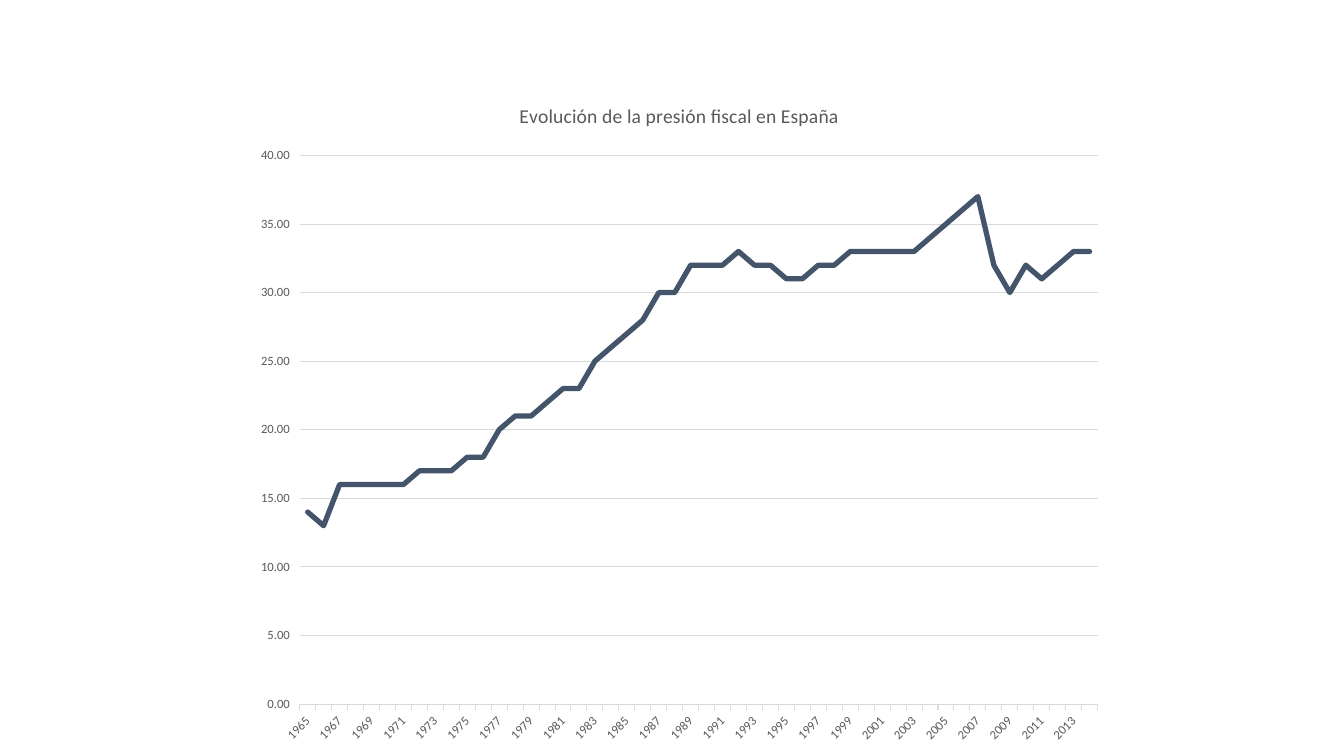
from pptx import Presentation
from pptx.chart.data import CategoryChartData
from pptx.dml.color import RGBColor
from pptx.enum.chart import XL_CHART_TYPE, XL_TICK_MARK
from pptx.util import Emu, Pt

EMU_PER_PX = 9525
FIRST_YEAR = 1965
TAX_PRESSURE = [
    14, 13, 16, 16, 16, 16, 16, 17, 17, 17,
    18, 18, 20, 21, 21, 22, 23, 23, 25, 26,
    27, 28, 30, 30, 32, 32, 32, 33, 32, 32,
    31, 31, 32, 32, 33, 33, 33, 33, 33, 34,
    35, 36, 37, 32, 30, 32, 31, 32, 33, 33,
]


def px(length):
    return Emu(length * EMU_PER_PX)


def color(value):
    return RGBColor.from_string(value)


class SlideBuilder:
    """Holds the chart style and the current slide."""

    font_name = "Calibri"
    text_color = "595959"
    rule_color = "D9D9D9"
    series_color = "44546A"

    def __init__(self, slide):
        self.slide = slide

    def style_font(self, font, size):
        font.name = self.font_name
        font.size = Pt(size)
        font.bold = False
        font.color.rgb = color(self.text_color)

    def style_line(self, line, value, width):
        line.color.rgb = color(value)
        line.width = Pt(width)

    def chart_title(self, chart, text):
        chart.has_title = True
        chart.chart_title.include_in_layout = False
        paragraph = chart.chart_title.text_frame.paragraphs[0]
        paragraph.text = text
        self.style_font(paragraph.runs[0].font, 14)

    def category_axis(self, axis):
        self.style_font(axis.tick_labels.font, 9)
        axis.major_tick_mark = XL_TICK_MARK.OUTSIDE
        axis.minor_tick_mark = XL_TICK_MARK.NONE
        self.style_line(axis.format.line, self.rule_color, 0.75)
        body = axis._element.txPr.bodyPr
        body.set("rot", "-2700000")
        body.set("vert", "horz")

    def value_axis(self, axis, maximum, step):
        self.style_font(axis.tick_labels.font, 9)
        axis.tick_labels.number_format = "0.00"
        axis.tick_labels.number_format_is_linked = False
        axis.minimum_scale = 0
        axis.maximum_scale = maximum
        axis.major_unit = step
        axis.major_tick_mark = XL_TICK_MARK.OUTSIDE
        axis.minor_tick_mark = XL_TICK_MARK.NONE
        axis.format.line.fill.background()
        axis.has_major_gridlines = True
        self.style_line(axis.major_gridlines.format.line, self.rule_color, 0.75)

    def line_chart(self, left, top, width, height, title, categories, values):
        data = CategoryChartData(number_format="0.00")
        data.categories = categories
        data.add_series("Presión fiscal", values)
        frame = self.slide.shapes.add_chart(
            XL_CHART_TYPE.LINE, px(left), px(top), px(width), px(height), data
        )
        chart = frame.chart
        chart.font.name = self.font_name
        chart.font.size = Pt(10)
        chart.has_legend = False
        self.chart_title(chart, title)
        self.category_axis(chart.category_axis)
        self.value_axis(chart.value_axis, 40, 5)
        plot = chart.plots[0]
        plot.vary_by_categories = False
        series = plot.series[0]
        series.smooth = False
        self.style_line(series.format.line, self.series_color, 3.75)
        series._element.xpath("c:spPr/a:ln")[0].set("cap", "rnd")


def main():
    presentation = Presentation()
    presentation.slide_width = px(1280)
    presentation.slide_height = px(720)
    slide = presentation.slides.add_slide(presentation.slide_layouts[6])
    years = [str(FIRST_YEAR + index) for index in range(len(TAX_PRESSURE))]
    SlideBuilder(slide).line_chart(
        232, 76, 830, 644,
        "Evolución de la presión fiscal en España", years, TAX_PRESSURE,
    )
    presentation.save("out.pptx")


if __name__ == "__main__":
    main()
